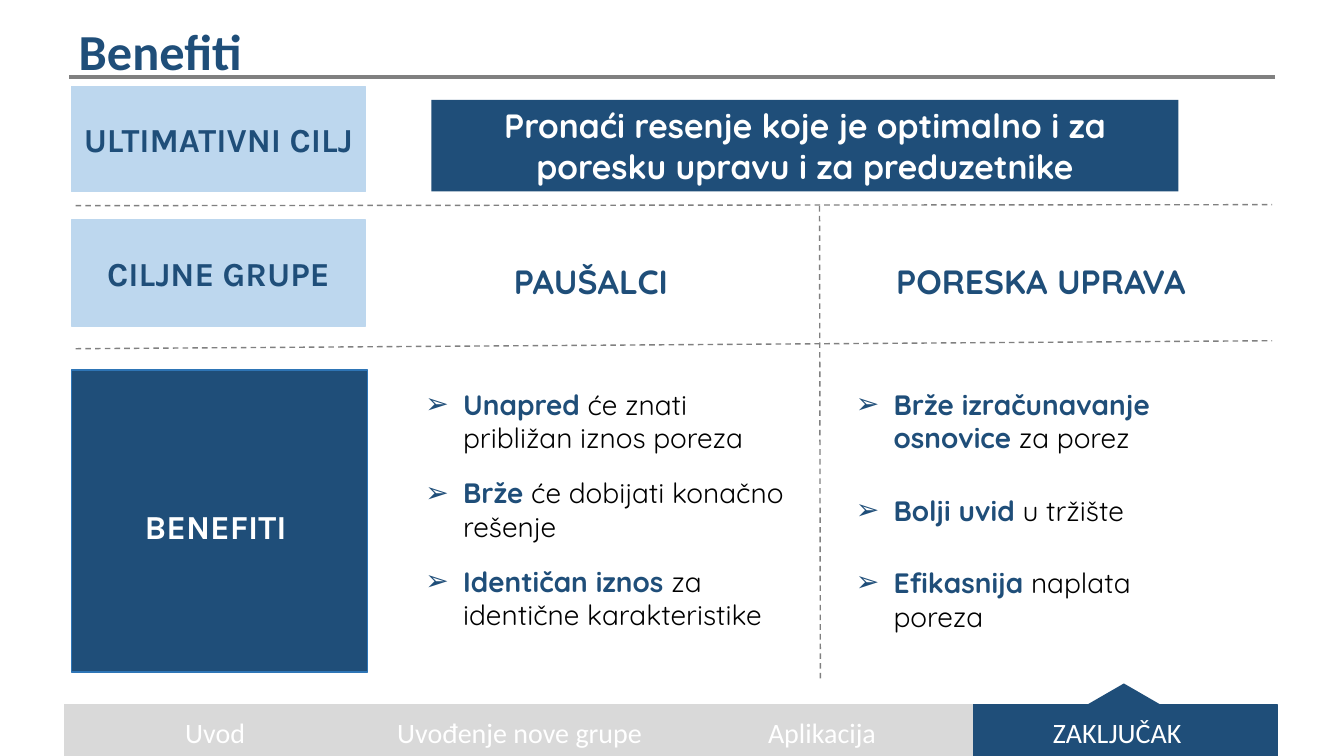
import pptx
import pptx.util
import pptx.dml.color
import pptx.enum.dml
import pptx.enum.shapes
import pptx.enum.text
import pptx.oxml
import pptx.oxml.ns
import lxml.etree

Pt = pptx.util.Pt
Shape = pptx.enum.shapes.MSO_SHAPE
Align = pptx.enum.text.PP_ALIGN
Anchor = pptx.enum.text.MSO_ANCHOR
NAVY, SKY, GREY, PALE, WHITE = "1F4E79", "BDD7EE", "808080", "D9D9D9", "FFFFFF"


def color(code):
    return pptx.dml.color.RGBColor.from_string(code)


def tag(node, name, **attrs):
    return lxml.etree.SubElement(node, pptx.oxml.ns.qn(name), **attrs)


class Deck:
    head, body, label = "Calibri", "Quicksand", "Karla"

    def __init__(self, file):
        self.slide = file.slides.add_slide(file.slide_layouts[3])
        self.shapes = self.slide.shapes

    def place(self, item, x, y, w, h):
        item.left, item.top, item.width, item.height = map(Pt, (x, y, w, h))

    def font(self, par, name, size, ink, bold=True):
        font = par.font
        font.name, font.size, font.bold = name, Pt(size), bold
        font.color.rgb = color(ink)

    def title(self, text, box):
        item = self.shapes.title
        self.place(item, *box)
        frame = item.text_frame
        frame.text = text
        frame.word_wrap = False
        frame.auto_size = pptx.enum.text.MSO_AUTO_SIZE.NONE
        frame.vertical_anchor = Anchor.TOP
        par = frame.paragraphs[0]
        par.alignment = Align.LEFT
        self.font(par, self.head, 36, NAVY)

    def caption(self, item, text, name, size, ink, bold=True):
        frame = item.text_frame
        frame.word_wrap = True
        frame.vertical_anchor = Anchor.MIDDLE
        par = frame.paragraphs[0]
        par.text = text
        par.alignment = Align.CENTER
        self.font(par, name, size, ink, bold)

    def text(self, text, box, *style):
        item = self.shapes.add_textbox(*map(Pt, box))
        self.caption(item, text, *style)

    def block(self, box, fill, edge=None, kind=Shape.RECTANGLE):
        item = self.shapes.add_shape(kind, *map(Pt, box))
        item.shadow.inherit = False
        item.fill.solid()
        item.fill.fore_color.rgb = color(fill)
        if edge:
            item.line.color.rgb = color(edge)
            item.line.width = Pt(1)
        else:
            item.line.fill.background()
        return item

    def rule(self, ends, width=1, dash=True):
        kind = pptx.enum.shapes.MSO_CONNECTOR.STRAIGHT
        item = self.shapes.add_connector(kind, *map(Pt, ends))
        item.line.color.rgb = color(GREY)
        item.line.width = Pt(width)
        if dash:
            item.line.dash_style = pptx.enum.dml.MSO_LINE.DASH
        tag(item.element.spPr, "a:effectLst")

    def points(self, index, x, gap, rows):
        item = self.slide.placeholders[index]
        self.place(item, x, 272.9, 270.7, 190)
        frame = item.text_frame
        frame.auto_size = pptx.enum.text.MSO_AUTO_SIZE.NONE
        frame.vertical_anchor = Anchor.TOP
        for i, (strong, rest) in enumerate(rows):
            par = frame.add_paragraph() if i else frame.paragraphs[0]
            par.space_before, par.space_after = Pt(0), Pt(gap)
            self.font(par, self.body, 20, "000000", False)
            lead = par.add_run()
            lead.text = strong
            lead.font.bold = True
            lead.font.color.rgb = color(NAVY)
            par.add_run().text = rest
            self.bullet(par)

    def bullet(self, par):
        props = par._p.get_or_add_pPr()
        props.set("marL", str(Pt(27)))
        props.set("indent", str(Pt(-27)))
        ends = props.find(pptx.oxml.ns.qn("a:defRPr"))
        tag(tag(props, "a:buClr"), "a:srgbClr", val=NAVY)
        tag(props, "a:buFont", typeface="Arial")
        tag(props, "a:buChar", char="➢")
        props.append(ends)


def main():
    file = pptx.Presentation()
    file.slide_width, file.slide_height = Pt(960), Pt(540)
    deck = Deck(file)

    deck.rule((910.8, 55.2, 49, 55.2), 3, False)
    deck.title("Benefiti", (49, 10.8, 132.5, 51))

    goal = deck.block((308.2, 71.3, 533.5, 65.5), NAVY)
    deck.caption(goal, "Pronaći resenje koje je optimalno i za poresku upravu i za preduzetnike",
                 deck.body, 24, WHITE)
    deck.block((51, 264.2, 211.7, 216), NAVY, "2E75B6")
    for text, y, h in (("ULTIMATIVNI CILJ", 61.9, 75), ("CILJNE GRUPE", 157, 76)):
        item = deck.block((51, y, 210, h), SKY, SKY)
        deck.caption(item, text, deck.label, 24, NAVY)
    deck.text("BENEFITI", (54, 357.8, 200, 36), deck.label, 24, WHITE)

    for ends in ((54, 146.9, 908.6, 146.2), (586, 484.6, 585.4, 146.2),
                 (54, 249.1, 908.6, 243.4)):
        deck.rule(ends)

    for text, x, w in (("PAUŠALCI", 337, 170), ("PORESKA UPRAVA", 617.8, 251.3)):
        deck.text(text, (x, 182.9, w, 36), deck.body, 24, NAVY)
    deck.points(1, 296.6, 15.2, (
        ("Unapred", " će znati približan iznos poreza"),
        ("Brže", " će dobijati konačno rešenje"),
        ("Identičan iznos ", "za identične karakteristike")))
    deck.points(2, 604.1, 27.7, (
        ("Brže izračunavanje osnovice", " za porez"),
        ("Bolji uvid", " u tržište"),
        ("Efikasnija", " naplata poreza")))

    steps = (("Uvod", 153.7), ("Uvođenje nove grupe", 371.2),
             ("Aplikacija", 587.2), ("ZAKLJUČAK", 798.1))
    for i, (text, mid) in enumerate(steps):
        fill = NAVY if i == len(steps) - 1 else PALE
        deck.block((46.1 + 216.5 * i, 503.3, 216.5, 36.7), fill, fill)
        deck.text(text, (mid - 115, 506.9, 230, 31.7), deck.head, 20, WHITE, False)
    deck.block((770.4, 488.2, 64.8, 18.7), NAVY, kind=Shape.ISOSCELES_TRIANGLE)

    file.save("out.pptx")


if __name__ == "__main__":
    main()
